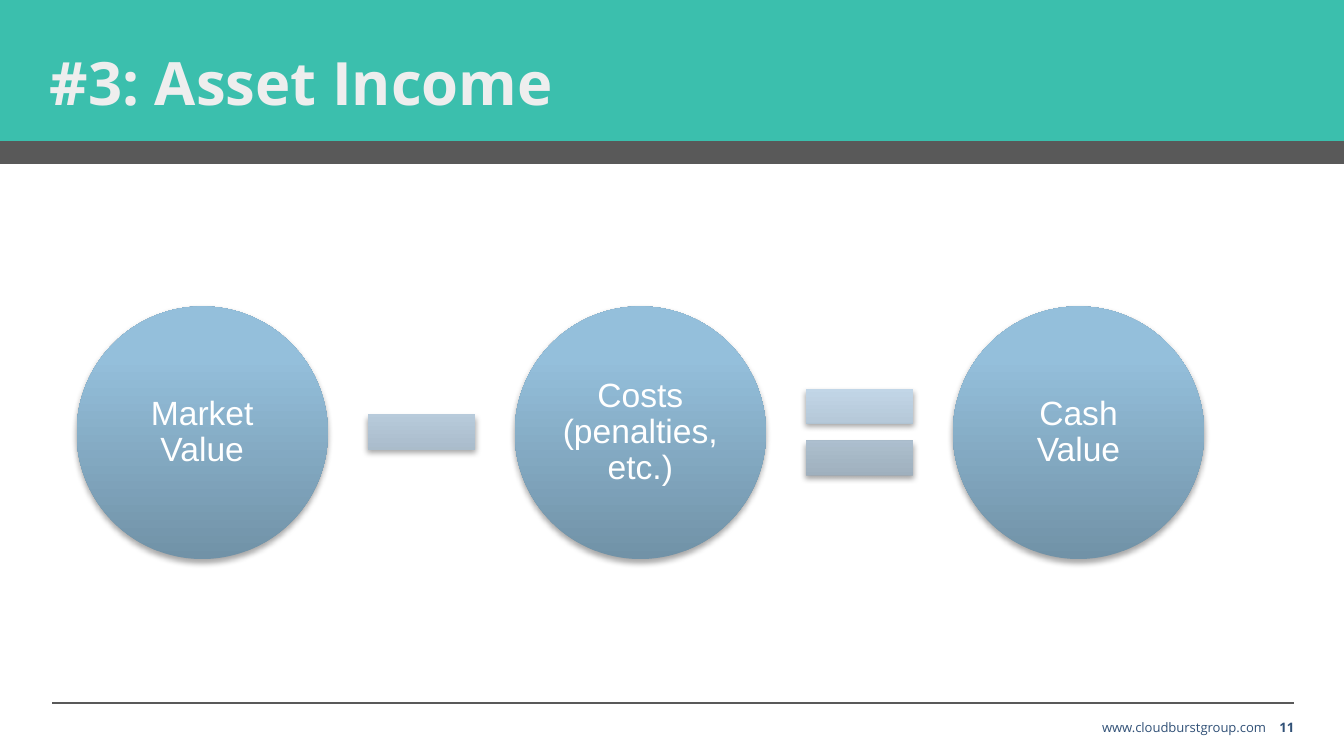
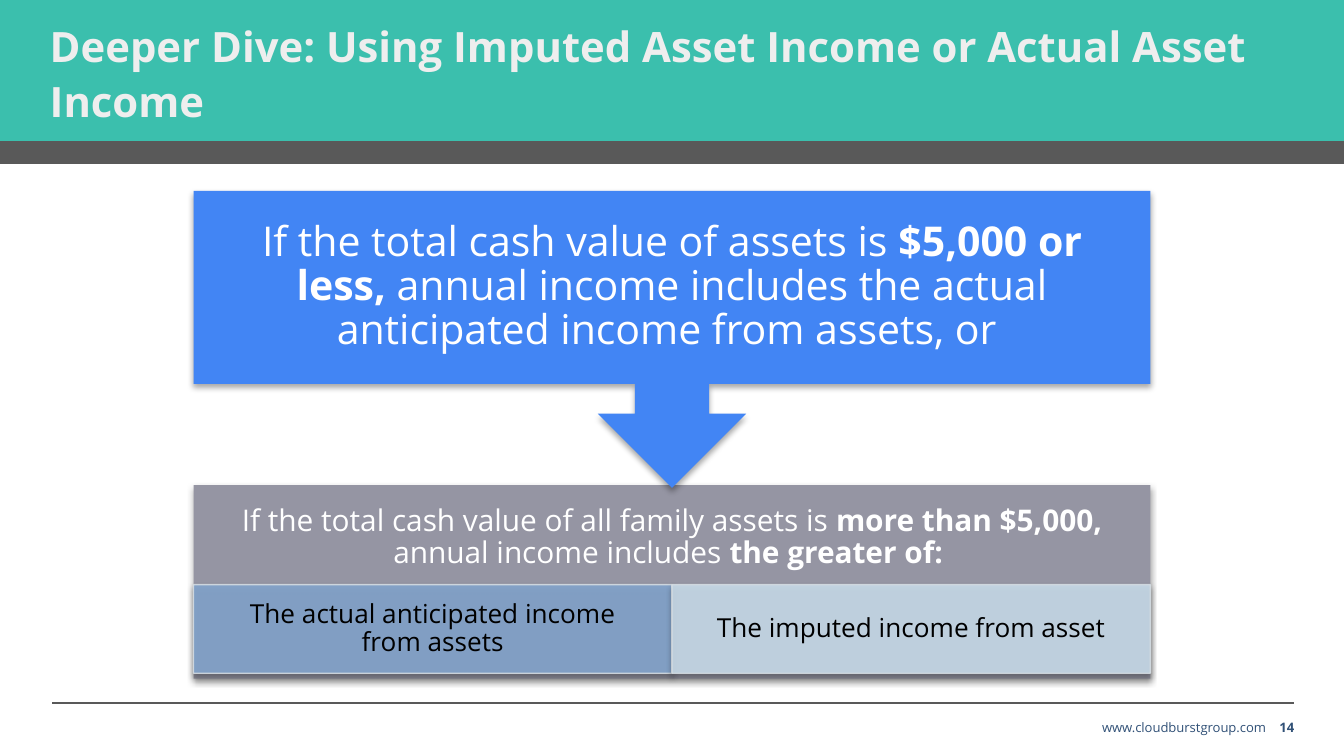
"""Two slides on asset income: the cash value sum and the imputed income rule."""
from pptx import Presentation
from pptx.dml.color import RGBColor
from pptx.enum.shapes import MSO_CONNECTOR as Connector, MSO_SHAPE as Preset
from pptx.enum.text import MSO_ANCHOR as Anchor, PP_ALIGN as Align
from pptx.oxml import parse_xml
from pptx.oxml.ns import nsdecls, qn
from pptx.util import Inches, Pt
from lxml import etree

TEAL = RGBColor(0x3B, 0xBF, 0xAD)
GREY = RGBColor(0x59, 0x59, 0x59)
NAVY = RGBColor(0x31, 0x51, 0x77)
PALE = RGBColor(0xEE, 0xEE, 0xEE)
WHITE = RGBColor(0xFF, 0xFF, 0xFF)
BLACK = RGBColor(0x00, 0x00, 0x00)
BLUE = RGBColor(0x42, 0x85, 0xF4)
SLATE = RGBColor(0x95, 0x95, 0xA3)
STEEL = RGBColor(0x84, 0xA5, 0xCD)
MIST = RGBColor(0xC8, 0xDB, 0xE9)
EDGE = RGBColor(0xD5, 0xDD, 0xE3)
CIRCLE_STOPS = [(0, RGBColor(0x71, 0x92, 0xA7)), (80, RGBColor(0x94, 0xBF, 0xDB)),
                (100, RGBColor(0x94, 0xC1, 0xDD))]
SIGN_STOPS = [(0, RGBColor(0x93, 0xA3, 0xB0)), (80, RGBColor(0xC2, 0xD6, 0xE7)),
              (100, RGBColor(0xC3, 0xD7, 0xE8))]
SANS = "Open Sans"


def add_block(page, preset, place, fill, adjust=(), shadow=True):
    """Add a borderless shape with a plain colour or a vertical gradient."""
    block = page.shapes.add_shape(preset, *[Inches(length) for length in place])
    for index, value in enumerate(adjust):
        block.adjustments[index] = value
    properties = block._element.spPr
    if isinstance(fill, RGBColor):
        block.fill.solid()
        block.fill.fore_color.rgb = fill
    else:
        stops = "".join(f'<a:gs pos="{spot * 1000}"><a:srgbClr val="{color}"/></a:gs>'
                        for spot, color in fill)
        properties.find(qn("a:prstGeom")).addnext(parse_xml(
            f'<a:gradFill {nsdecls("a")} rotWithShape="1"><a:gsLst>{stops}</a:gsLst>'
            '<a:lin ang="16200000" scaled="0"/></a:gradFill>'))
    block.line.fill.background()
    block.shadow.inherit = False
    if shadow:
        properties.find(qn("a:effectLst")).append(parse_xml(
            f'<a:outerShdw {nsdecls("a")} blurRad="40000" dist="23000" dir="5400000" '
            'rotWithShape="0"><a:srgbClr val="000000"><a:alpha val="35000"/></a:srgbClr>'
            '</a:outerShdw>'))
    return block


def write(box, runs, size, color, insets, align=Align.CENTER, spacing=0.9,
          anchor=Anchor.MIDDLE, font=SANS):
    """Fill a shape with one paragraph of (text, bold) runs."""
    frame = box.text_frame
    frame.word_wrap = True
    frame.vertical_anchor = anchor
    (frame.margin_left, frame.margin_top,
     frame.margin_right, frame.margin_bottom) = [Inches(inset) for inset in insets]
    para = frame.paragraphs[0]
    para.alignment = align
    para.line_spacing = spacing
    for text, bold in runs:
        span = para.add_run()
        span.text = text
        span.font.name = font
        span.font.size = Pt(size)
        span.font.bold = bold
        span.font.color.rgb = color
    return para


deck = Presentation()
deck.slide_width = Inches(10)
deck.slide_height = deck.slide_width * 9 // 16

pages = []
for title, size, spacing, number in [
    ("#3: Asset Income", 32, 1.3, "11"),
    ("Deeper Dive: Using Imputed Asset Income or Actual Asset Income", 22.4, 1.1, "14"),
]:
    page = deck.slides.add_slide(deck.slide_layouts[6])
    pages.append(page)
    rule = page.shapes.add_connector(
        Connector.STRAIGHT, Inches(0.39), Inches(5.23), Inches(9.63), Inches(5.23))
    rule.line.color.rgb = GREY
    rule.line.width = Pt(0.75)
    etree.SubElement(rule._element.spPr, qn("a:effectLst"))

    footer = page.shapes.add_textbox(Inches(6.69), Inches(5.32), Inches(2.99), Inches(0.24))
    tabs = parse_xml(f'<a:tabLst {nsdecls("a")}/>')
    for stop in (2.67, 2.88):
        etree.SubElement(tabs, qn("a:tab"), pos=str(Inches(stop)), algn="r")
    footer.text_frame.paragraphs[0]._p.get_or_add_pPr().append(tabs)
    write(footer, [("\twww.cloudburstgroup.com", False), ("\t" + number, True)], 7, NAVY,
          (0.06, 0.03, 0.03, 0.03), Align.LEFT, 1.0, Anchor.TOP)

    add_block(page, Preset.RECTANGLE, (0, 0, 10, 1.05), TEAL, shadow=False)
    add_block(page, Preset.RECTANGLE, (0, 1.05, 10, 0.17), GREY, shadow=False)
    heading = page.shapes.add_textbox(Inches(0.3), 0, Inches(9.33), Inches(1.05))
    para = write(heading, [(title, True)], size, PALE, (0.07, 0.04, 0.07, 0.04),
                 Align.LEFT, spacing)
    para.space_after = Pt(12)

sum_page, rule_page = pages

STEP = 3.26
for index, term in enumerate(["Market Value", "Costs (penalties, etc.)", "Cash Value"]):
    circle = add_block(sum_page, Preset.OVAL, (0.57 + index * STEP, 2.28, 1.87, 1.88),
                       CIRCLE_STOPS)
    write(circle, [(term, False)], 18, WHITE, [0.03] * 4, font="Arial")
for index, (sign, adjust) in enumerate([(Preset.MATH_MINUS, [0.235]),
                                        (Preset.MATH_EQUAL, [0.235, 0.118])]):
    add_block(sum_page, sign, (2.59 + index * STEP, 2.67, 1.09, 1.09), SIGN_STOPS, adjust)

over_limit = add_block(rule_page, Preset.RECTANGLE, (1.44, 3.61, 7.12, 1.44), SLATE)
write(over_limit, [("If the total cash value of all family assets is ", False),
                   ("more than $5,000, ", True),
                   ("annual income includes ", False),
                   ("the greater of: ", True)], 16, WHITE, (0.22, 0.22, 0.22, 0.88))

for index, (choice, color) in enumerate([("The actual anticipated income from assets", STEEL),
                                         ("The imputed income from asset", MIST)]):
    place = (1.44 + index * 3.56, 4.35, 3.56, 0.66)
    option = add_block(rule_page, Preset.RECTANGLE, place, color)
    option.line.color.rgb = EDGE
    option.line.width = Pt(0.75)
    for tint in option._element.spPr.iter(qn("a:srgbClr")):
        if tint.getparent().tag == qn("a:solidFill"):
            etree.SubElement(tint, qn("a:alpha"), val="90000")
    label = rule_page.shapes.add_textbox(*[Inches(length) for length in place])
    write(label, [(choice, False)], 14, BLACK, (0.24, 0.04, 0.24, 0.04))

under_limit = add_block(rule_page, Preset.DOWN_ARROW_CALLOUT, (1.44, 1.42, 7.12, 2.21),
                        BLUE, [0.25, 0.25, 0.25, 0.65])
write(under_limit, [("If the total cash value of assets is ", False),
                    ("$5,000 or less, ", True),
                    ("annual income includes the actual anticipated income from assets, or ",
                     False)], 22, WHITE, [0.22] * 4)

deck.save("out.pptx")
